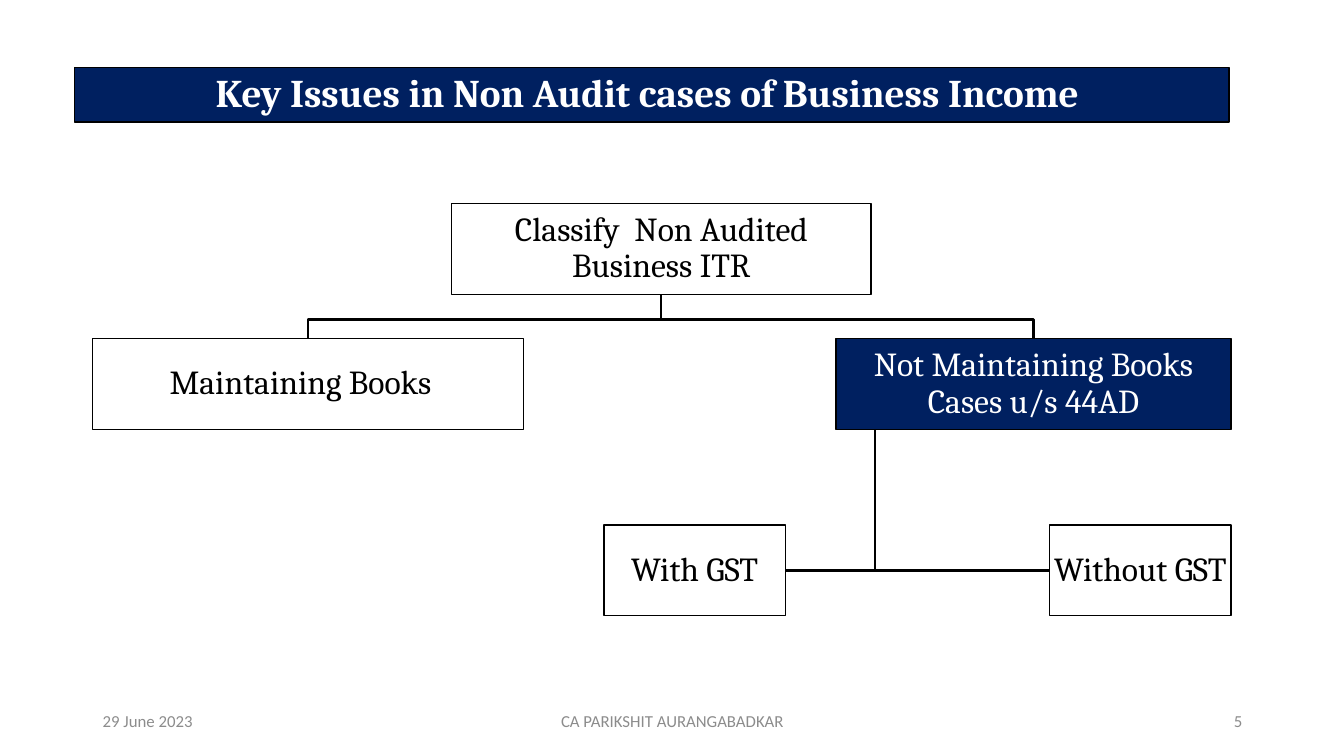
import pptx
import pptx.util
import pptx.dml.color
import pptx.enum.shapes
import pptx.enum.text

Inches = pptx.util.Inches
Align = pptx.enum.text.PP_ALIGN

COLORS = {"navy": "002060", "white": "FFFFFF", "black": "000000", "gray": "8C8C8C"}
TITLE = "Key Issues in Non Audit cases of Business Income"
TITLE_BOX = (0.74, 0.67, 11.45, 0.54)

BOX_HEIGHT = 0.9
INSET = 0.02
BOXES = {
    "root": ("Classify  Non Audited Business ITR", 4.48, 2.02, 4.16, "white", "black", INSET),
    "books": ("Maintaining Books", 0.92, 3.36, 4.27, "white", "black", 0.17),
    "no_books": ("Not Maintaining Books Cases u/s 44AD", 8.29, 3.36, 3.92, "navy", "white", INSET),
    "with_gst": ("With GST", 5.99, 5.21, 1.8, "white", "black", INSET),
    "without_gst": ("Without GST", 10.41, 5.21, 1.8, "white", "black", INSET),
}
BUS_TOP = 3.17
TRUNK_SHARE = 0.1

FOOTER_TOP, FOOTER_HEIGHT = 6.95, 0.4
FOOTERS = [
    ("29 June 2023", 0.92, 3, Align.LEFT),
    ("CA PARIKSHIT AURANGABADKAR", 4.42, 4.5, Align.CENTER),
    ("5", 9.42, 3, Align.RIGHT),
]


def rgb(name):
    return pptx.dml.color.RGBColor.from_string(COLORS[name])


def set_text(shape, text, font_name, size, color, alignment, bold=False, spacing=None):
    frame = shape.text_frame
    frame.text = text
    frame.word_wrap = True
    frame.auto_size = pptx.enum.text.MSO_AUTO_SIZE.NONE
    frame.vertical_anchor = pptx.enum.text.MSO_ANCHOR.MIDDLE
    paragraph = frame.paragraphs[0]
    paragraph.alignment = alignment
    if spacing:
        paragraph.line_spacing = spacing
    font = paragraph.runs[0].font
    font.name = font_name
    font.size = pptx.util.Pt(size)
    font.bold = bold
    font.color.rgb = rgb(color)


def paint(shape, fill):
    shape.fill.solid()
    shape.fill.fore_color.rgb = rgb(fill)
    shape.line.color.rgb = rgb("black")
    shape.line.width = pptx.util.Pt(1)


def add_branch(slide, points):
    corners = [(Inches(x), Inches(y)) for x, y in points]
    builder = slide.shapes.build_freeform(*corners[0], scale=1.0)
    builder.add_line_segments(corners[1:], close=False)
    branch = builder.convert_to_shape()
    branch.shadow.inherit = False
    branch.fill.background()
    branch.line.color.rgb = rgb("black")
    branch.line.width = pptx.util.Pt(1.5)


def add_branches(slide):
    def center(key):
        text, left, top, width, *style = BOXES[key]
        return left + width / 2, top

    root_x, root_top = center("root")
    for key in ("no_books", "books"):
        child_x, child_top = center(key)
        add_branch(slide, [(root_x, root_top + BOX_HEIGHT), (root_x, BUS_TOP),
                           (child_x, BUS_TOP), (child_x, child_top)])

    text, left, top, width, *style = BOXES["no_books"]
    trunk_x = left + TRUNK_SHARE * width
    for key in ("without_gst", "with_gst"):
        text, child_left, child_top, child_width, *style = BOXES[key]
        child_edge = child_left if child_left > trunk_x else child_left + child_width
        middle = child_top + BOX_HEIGHT / 2
        add_branch(slide, [(trunk_x, top + BOX_HEIGHT), (trunk_x, middle), (child_edge, middle)])


def add_box(slide, text, left, top, width, fill, color, right_inset):
    box = slide.shapes.add_shape(
        pptx.enum.shapes.MSO_SHAPE.RECTANGLE,
        Inches(left), Inches(top), Inches(width), Inches(BOX_HEIGHT))
    box.shadow.inherit = False
    paint(box, fill)
    frame = box.text_frame
    frame.margin_left = frame.margin_top = frame.margin_bottom = Inches(INSET)
    frame.margin_right = Inches(right_inset)
    set_text(box, text, "Cambria", 24, color, Align.CENTER, spacing=0.9)


def main():
    presentation = pptx.Presentation()
    presentation.slide_width = Inches(13.33)
    presentation.slide_height = Inches(7.5)
    slide = presentation.slides.add_slide(presentation.slide_layouts[5])

    title = slide.shapes.title
    title.left, title.top, title.width, title.height = map(Inches, TITLE_BOX)
    paint(title, "navy")
    title.text_frame.margin_right = Inches(0.19)
    set_text(title, TITLE, "Cambria", 28, "white", Align.CENTER, bold=True, spacing=0.9)

    add_branches(slide)
    for box in BOXES.values():
        add_box(slide, *box)

    for text, left, width, alignment in FOOTERS:
        footer = slide.shapes.add_textbox(
            Inches(left), Inches(FOOTER_TOP), Inches(width), Inches(FOOTER_HEIGHT))
        set_text(footer, text, "Calibri", 12, "gray", alignment)

    presentation.save("out.pptx")


if __name__ == "__main__":
    main()
